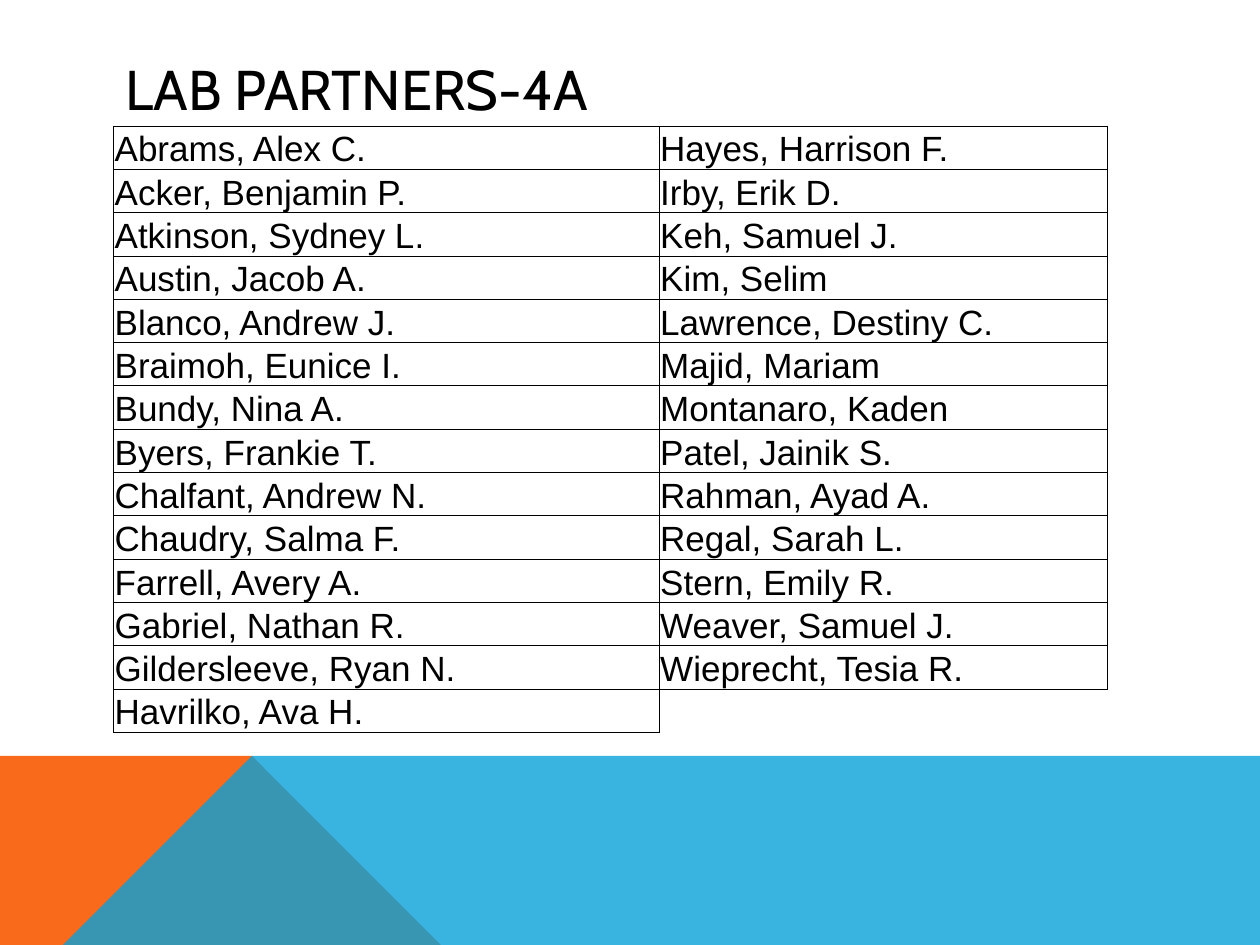
from lxml import etree
from pptx import Presentation
from pptx import util as u
from pptx.dml.color import RGBColor
from pptx.enum import text as t
from pptx.oxml.ns import qn

TITLE = "LAB PARTNERS-4A"
LEFT = [
    "Abrams, Alex C.", "Acker, Benjamin P.", "Atkinson, Sydney L.",
    "Austin, Jacob A.", "Blanco, Andrew J.", "Braimoh, Eunice I.",
    "Bundy, Nina A.", "Byers, Frankie T.", "Chalfant, Andrew N.",
    "Chaudry, Salma F.", "Farrell, Avery A.", "Gabriel, Nathan R.",
    "Gildersleeve, Ryan N.", "Havrilko, Ava H.",
]
RIGHT = [
    "Hayes, Harrison F.", "Irby, Erik D.", "Keh, Samuel J.", "Kim, Selim",
    "Lawrence, Destiny C.", "Majid, Mariam", "Montanaro, Kaden",
    "Patel, Jainik S.", "Rahman, Ayad A.", "Regal, Sarah L.",
    "Stern, Emily R.", "Weaver, Samuel J.", "Wieprecht, Tesia R.",
]
BLACK = RGBColor(0, 0, 0)
ORANGE = RGBColor(0xF9, 0x6A, 0x1B)
BLUE = RGBColor(0x08, 0xA1, 0xD9)

WIDE, HIGH = 10, 7.5
EDGE, TOP = 0.9, 1
COLS = 4.33, 3.56
ROW, SHORT = 0.34, 0.32
BAND, PEAK, FOOT = 6.18, 2.23, 3.91


def write(frame, words, font, size, color=BLACK):
    run = frame.paragraphs[0].add_run()
    run.text = words
    run.font.name, run.font.size = font, u.Pt(size)
    run.font.color.rgb = color


def shade(slide, points, color, alpha=100):
    """Draw a filled polygon; alpha is its opacity in percent."""
    pen = slide.shapes.build_freeform(*points[0], scale=u.Inches(1))
    pen.add_line_segments(points[1:], close=True)
    shape = pen.convert_to_shape()
    shape.shadow.inherit = False
    shape.fill.solid()
    shape.fill.fore_color.rgb = color
    shape.line.fill.background()
    if alpha < 100:
        tone = shape.fill._xPr.find(".//" + qn("a:srgbClr"))
        etree.SubElement(tone, qn("a:alpha"), val=str(alpha * 1000))


def rule(cell, sides):
    """Line the named sides of a cell and clear the others."""
    props = cell._tc.get_or_add_tcPr()
    for side in "LRTB":
        line = etree.SubElement(props, qn("a:ln" + side), w=str(u.Pt(0.5)))
        if side in sides:
            fill = etree.SubElement(line, qn("a:solidFill"))
            etree.SubElement(fill, qn("a:srgbClr"), val=str(BLACK))
        else:
            etree.SubElement(line, qn("a:noFill"))


def roster(slide):
    count = len(LEFT)
    grid = slide.shapes.add_table(
        count, len(COLS), u.Inches(EDGE), u.Inches(TOP),
        u.Inches(sum(COLS)), u.Inches(ROW * count)).table
    grid.first_row = grid.horz_banding = False
    for col, width in zip(grid.columns, COLS):
        col.width = u.Inches(width)
    for i, row in enumerate(grid.rows):
        row.height = u.Inches(SHORT if i == 4 else ROW)
        for cell, names in zip(row.cells, (LEFT, RIGHT)):
            cell.margin_left = cell.margin_right = u.Inches(0.01)
            cell.margin_top, cell.margin_bottom = u.Inches(0.01), 0
            cell.vertical_anchor = t.MSO_ANCHOR.BOTTOM
            named = i < len(names)
            rule(cell, "LRTB" if named else "LT")
            cell.fill.background()
            if named:
                write(cell.text_frame, names[i], "Arial", 20)


def main():
    deck = Presentation()
    deck.slide_width, deck.slide_height = u.Inches(WIDE), u.Inches(HIGH)
    slide = deck.slides.add_slide(deck.slide_layouts[6])
    shade(slide, [(0, HIGH), (0, BAND), (PEAK, BAND), (FOOT, HIGH)], ORANGE)
    shade(slide, [(0, HIGH), (PEAK, BAND + 0.01), (WIDE, BAND + 0.01),
                  (WIDE, HIGH)], BLUE, alpha=80)
    frame = slide.shapes.add_textbox(
        u.Inches(EDGE), u.Inches(0.4), u.Inches(8.22), u.Inches(0.6)).text_frame
    frame.word_wrap = True
    frame.vertical_anchor = t.MSO_ANCHOR.MIDDLE
    write(frame, TITLE, "Cabin", 32)
    roster(slide)
    deck.save("out.pptx")


if __name__ == "__main__":
    main()
